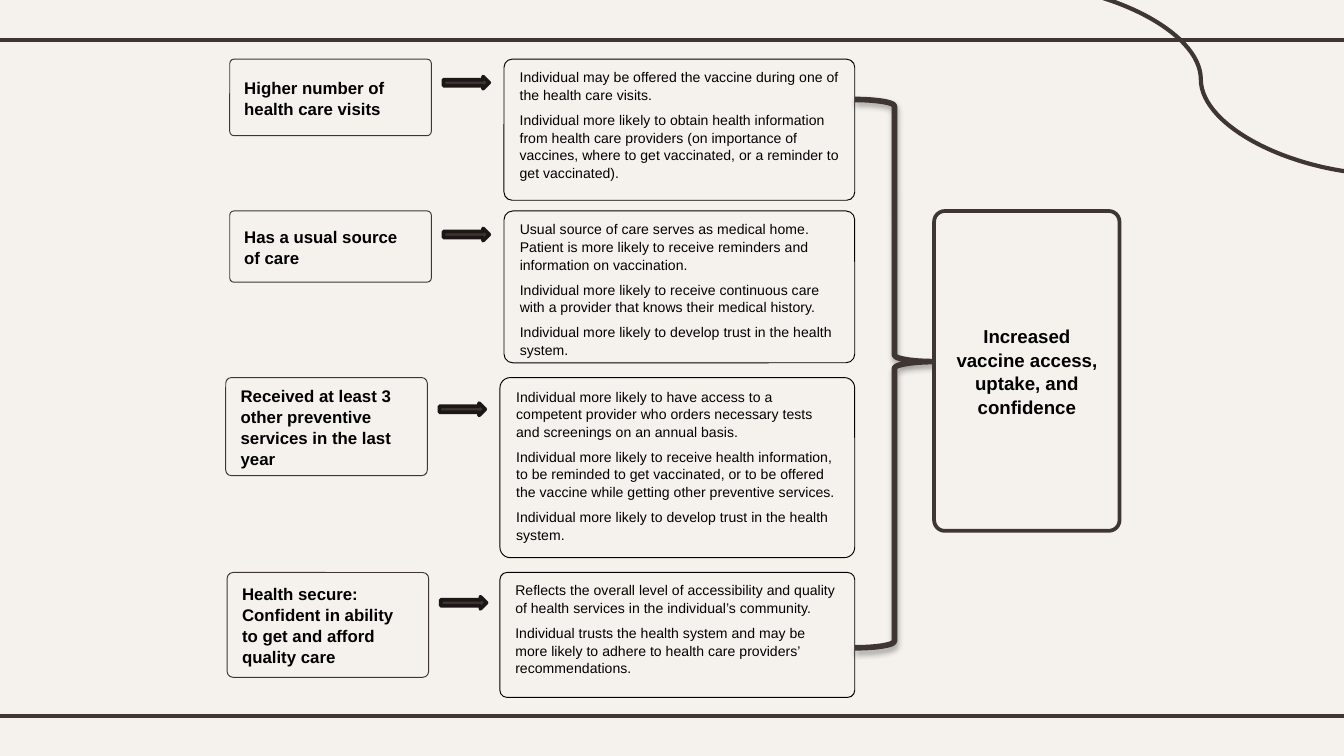
from lxml import etree
from pptx import Presentation
from pptx.dml.color import RGBColor
from pptx.enum.shapes import MSO_CONNECTOR, MSO_SHAPE
from pptx.enum.text import MSO_ANCHOR, PP_ALIGN
from pptx.oxml import parse_xml
from pptx.oxml.ns import nsdecls, qn
from pptx.util import Inches, Pt

STRAIGHT, CURVE = MSO_CONNECTOR.STRAIGHT, MSO_CONNECTOR.CURVE
ROUND, ARROW, BRACE = MSO_SHAPE.ROUNDED_RECTANGLE, MSO_SHAPE.RIGHT_ARROW, MSO_SHAPE.LEFT_BRACE
TOP, MIDDLE = MSO_ANCHOR.TOP, MSO_ANCHOR.MIDDLE
LEFT, CENTER = PP_ALIGN.LEFT, PP_ALIGN.CENTER

CREAM = RGBColor(0xF5, 0xF2, 0xEE)
BROWN = RGBColor(0x3F, 0x35, 0x33)
DARK = RGBColor(0x1C, 0x17, 0x16)
BLACK = RGBColor(0x00, 0x00, 0x00)

prs = Presentation()
prs.slide_width, prs.slide_height = Inches(10), Inches(5.625)
COL = ROW = prs.slide_width / 100
s = prs.slides.add_slide(prs.slide_layouts[6])
s.background.fill.solid()
s.background.fill.fore_color.rgb = CREAM


def add_shape(kind, x, y, w, h, fill, line, width):
    sp = s.shapes.add_shape(kind, int(x * COL), int(y * ROW), int(w * COL), int(h * ROW))
    sp.shadow.inherit = False
    if fill is None:
        sp.fill.background()
    else:
        sp.fill.solid()
        sp.fill.fore_color.rgb = fill
    sp.line.color.rgb = line
    sp.line.width = Pt(width)
    return sp


def add_box(x, y, w, h, line, width, texts, size, bold, anchor, align, after):
    sp = add_shape(ROUND, x, y, w, h, CREAM, line, width)
    sp.adjustments[0] = 0.058
    tf = sp.text_frame
    tf.word_wrap = True
    tf.vertical_anchor = anchor
    for i, text in enumerate(texts):
        p = tf.paragraphs[0] if i == 0 else tf.add_paragraph()
        p.alignment = align
        p.line_spacing = 1.05
        p.space_after = Pt(after)
        r = p.add_run()
        r.text = text
        r.font.name = "Arial"
        r.font.size = Pt(size)
        r.font.bold = bold
        r.font.color.rgb = BLACK


for kind, x1, y1, x2, y2 in [
    (STRAIGHT, -0.8, 3, 100.8, 3),
    (STRAIGHT, -0.8, 53.3, 100.8, 53.3),
    (CURVE, 75.3, -1.2, 103.4, 13),
]:
    cx = s.shapes.add_connector(kind, int(x1 * COL), int(y1 * ROW), int(x2 * COL), int(y2 * ROW))
    cx.line.color.rgb = BROWN
    cx.line.width = Pt(2.25)
    etree.SubElement(cx._element.spPr, qn("a:effectLst"))

TRUST = "Individual more likely to develop trust in the health system."
factors = [
    (17.1, 4.4, 5.7, 1.3, 37.5, 10.5, "Higher number of health care visits", [
        "Individual may be offered the vaccine during one of the health care visits.",
        "Individual more likely to obtain health information from health care providers "
        "(on importance of vaccines, where to get vaccinated, or a reminder to get vaccinated).",
    ]),
    (17.1, 15.7, 5.3, 1.3, 37.5, 11.3, "Has a usual source of care", [
        "Usual source of care serves as medical home. Patient is more likely to receive "
        "reminders and information on vaccination.",
        "Individual more likely to receive continuous care with a provider that knows "
        "their medical history.",
        TRUST,
    ]),
    (16.8, 28.1, 7.3, 1.9, 37.2, 13.4,
     "Received at least 3 other preventive services in the last year", [
         "Individual more likely to have access to a competent provider who orders "
         "necessary tests and screenings on an annual basis.",
         "Individual more likely to receive health information, to be reminded to get "
         "vaccinated, or to be offered the vaccine while getting other preventive services.",
         TRUST,
     ]),
    (16.9, 42.6, 7.8, 1.8, 37.2, 9.3,
     "Health secure: Confident in ability to get and afford quality care", [
         "Reflects the overall level of accessibility and quality of health services in "
         "the individual’s community.",
         "Individual trusts the health system and may be more likely to adhere to health "
         "care providers’ recommendations.",
     ]),
]
DETAIL_RIGHT = 63.6
for x, y, h, arrow_drop, detail_x, detail_h, factor, details in factors:
    add_box(x, y, 15, h, BROWN, 0.5, [factor], 9, True, MIDDLE, LEFT, 0)
    add_shape(ARROW, x + 15.9, y + arrow_drop, 3.4, 0.9, BROWN, DARK, 2)
    add_box(detail_x, y, DETAIL_RIGHT - detail_x, detail_h, BLACK, 0.5,
            details, 7.5, False, TOP, LEFT, 4)

brace = add_shape(BRACE, DETAIL_RIGHT, 7.4, 5.9, 40.8, None, BROWN, 3)
brace.rotation = 180
brace.adjustments[0] = 0.083
brace.adjustments[1] = 0.522
brace._element.spPr.find(qn("a:effectLst")).append(parse_xml(
    f'<a:outerShdw {nsdecls("a")} blurRad="{Pt(3.1)}" dist="{Pt(1.8)}" dir="5400000" rotWithShape="0">'
    '<a:srgbClr val="000000"><a:alpha val="35000"/></a:srgbClr></a:outerShdw>'))

add_box(69.5, 15.7, 13.8, 23.8, BROWN, 2,
        ["Increased vaccine access, uptake, and confidence"], 10, True, MIDDLE, CENTER, 0)

prs.save("out.pptx")
